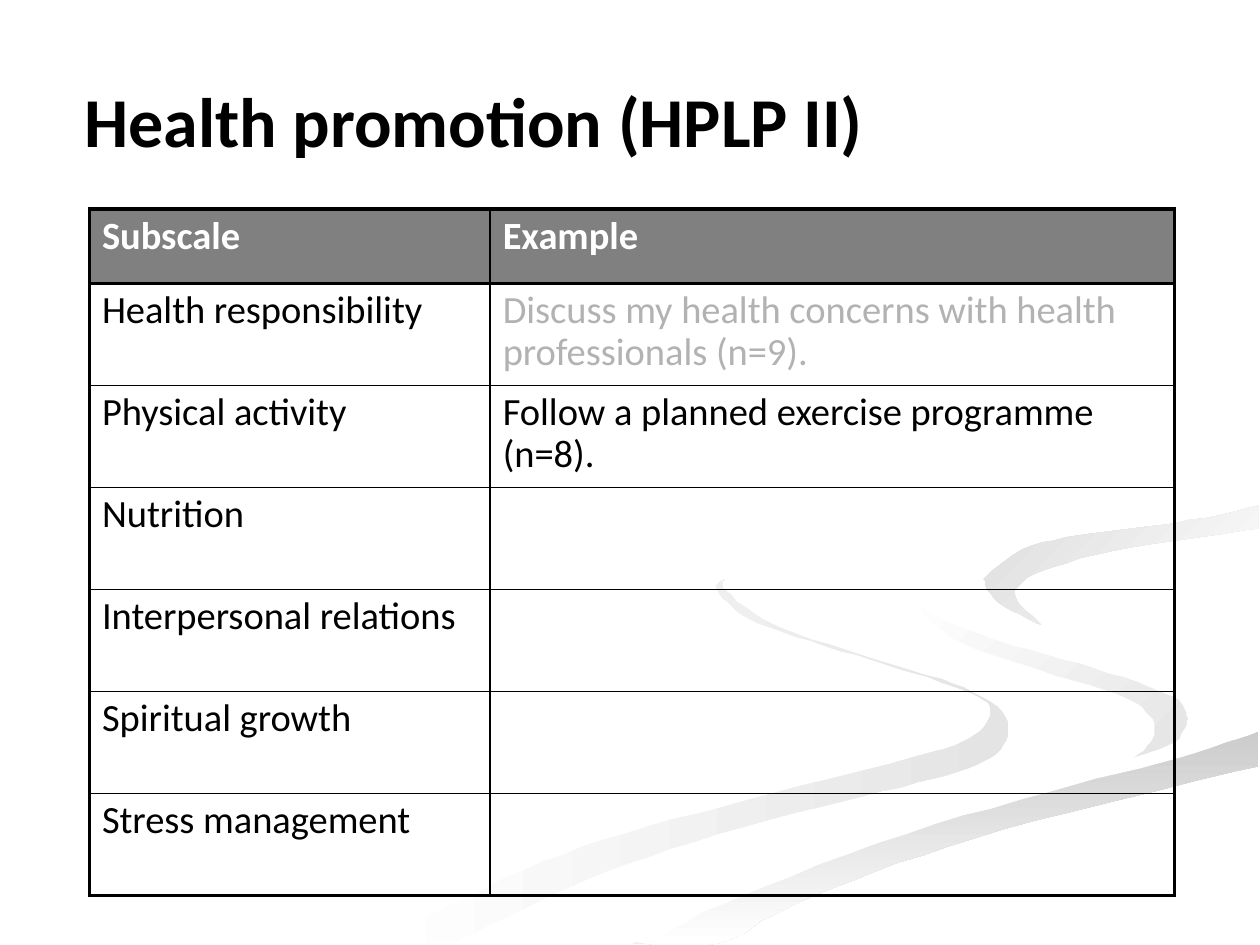
from itertools import chain

from lxml import etree
from pptx import Presentation
from pptx import util as u
from pptx.dml import color as dml
from pptx.enum import text
from pptx.oxml import ns

FONT = "Calibri"
BLACK, WHITE, GRAY, PALE = "000000", "FFFFFF", "808080", "B2B2B2"
THIN, THICK = 1, 2.25
CURVE_STEPS = 6

EDGES = {
    "left top": [(414, 331), (415, 338), (442, 357), (491, 374), (545, 391), (570, 404), (576, 418),
                 (566, 433), (533, 445), (469, 461), (383, 485), (310, 514), (260, 539)],
    "left bottom": [(216, 539), (300, 497), (359, 476), (443, 453), (532, 430), (557, 420),
                    (566, 407), (559, 398), (524, 385), (471, 369), (427, 353), (410, 337),
                    (414, 331)],
    "middle top": [(521, 334), (528, 348), (570, 366), (626, 382), (670, 398), (679, 410)],
    "middle turn": [(679, 410), (671, 424), (644, 436)],
    "middle bottom": [(644, 436), (658, 424), (659, 411), (642, 398), (603, 386), (551, 368),
                      (528, 351), (521, 334)],
    "lower top": [(374, 538), (410, 518), (501, 482), (598, 453), (674, 433), (719, 418)],
    "lower bottom": [(719, 438), (591, 469), (500, 498), (442, 523), (411, 539), (362, 539)],
    "white left": [(679, 410), (670, 425), (607, 445), (507, 472), (412, 506), (343, 539)],
    "white bay": [(719, 387), (664, 376), (599, 358), (566, 340), (562, 331)],
    "white crest": [(719, 279), (662, 289), (597, 299), (543, 311), (527, 321), (521, 334)],
    "upper top": [(562, 331), (584, 314), (623, 305), (672, 299), (719, 289)],
    "upper bottom": [(719, 302), (645, 313), (596, 326), (580, 340), (595, 357)],
    "upper hook": [(595, 357), (570, 344), (562, 331)],
}

RIBBONS = [
    (("left top", "left bottom"), WHITE, "E4E4E4", 0),
    (("middle top", "middle turn", "middle bottom"), WHITE, "E4E4E4", 45),
    (("lower top", "lower bottom"), "CCCCCC", WHITE, 90),
    (("middle top", "white left", "lower top", "white bay", "upper top", "white crest"),
     WHITE, WHITE, 0),
    (("upper top", "upper bottom", "upper hook"), "DCDCDC", WHITE, 45),
]

HEADINGS = ("Subscale", "Example")
SUBSCALES = [
    ("Health responsibility", "Discuss my health concerns with health professionals (n=9)."),
    ("Physical activity", "Follow a planned exercise programme (n=8)."),
    ("Nutrition", ""),
    ("Interpersonal relations", ""),
    ("Spiritual growth", ""),
    ("Stress management", ""),
]
COLUMN_WIDTHS = (229, 391)
HEADING_HEIGHT, ROW_HEIGHT = 42.5, 58.3


def rgb(value):
    return dml.RGBColor.from_string(value)


def set_font(paragraph, size, color, bold=False):
    font = paragraph.font
    font.name = FONT
    font.size = u.Pt(size)
    font.bold = bold
    font.color.rgb = rgb(color)


def spline(a, b, c, d, t):
    return (2 * b + (c - a) * t + (2 * a - 5 * b + 4 * c - d) * t ** 2
            + (3 * b - a - 3 * c + d) * t ** 3) / 2


def smooth(knots):
    padded = [knots[0], *knots, knots[-1]]
    points = []
    for window in zip(padded, padded[1:], padded[2:], padded[3:]):
        for step in range(CURVE_STEPS):
            points.append(tuple(spline(*axis, step / CURVE_STEPS) for axis in zip(*window)))
    return points + [knots[-1]]


def add_ribbon(page, edge_names, start, end, angle):
    outline = list(chain.from_iterable(smooth(EDGES[name]) for name in edge_names))
    builder = page.shapes.build_freeform(*outline[0], scale=u.Pt(1))
    builder.add_line_segments(outline[1:], close=True)
    ribbon = builder.convert_to_shape()
    ribbon.shadow.inherit = False
    ribbon.line.fill.background()
    if start == end:
        ribbon.fill.solid()
        ribbon.fill.fore_color.rgb = rgb(start)
        return
    ribbon.fill.gradient()
    ribbon.fill.gradient_angle = -angle % 360
    for stop, color in zip(ribbon.fill.gradient_stops, (start, end)):
        stop.color.rgb = rgb(color)


def add_title(page, wording):
    box = page.shapes.add_textbox(u.Pt(48.2), u.Pt(20.2), u.Pt(535), u.Pt(72))
    frame = box.text_frame
    frame.word_wrap = True
    frame.vertical_anchor = text.MSO_ANCHOR.BOTTOM
    frame.margin_left = frame.margin_right = u.Pt(0)
    frame.margin_top = frame.margin_bottom = u.Pt(0)
    paragraph = frame.paragraphs[0]
    paragraph.text = wording
    set_font(paragraph, 40, BLACK, bold=True)


def set_borders(cell, **widths):
    properties = cell._tc.get_or_add_tcPr()
    for side, width in widths.items():
        line = etree.SubElement(properties, ns.qn(f"a:ln{side}"), w=str(u.Pt(width)))
        fill = etree.SubElement(line, ns.qn("a:solidFill"))
        etree.SubElement(fill, ns.qn("a:srgbClr"), val=BLACK)


def write_cell(cell, wording, color, bold=False):
    paragraph = cell.text_frame.paragraphs[0]
    paragraph.text = wording
    paragraph.line_spacing = 0.9
    paragraph.space_after = u.Pt(4.4)
    set_font(paragraph, 22, color, bold)


def add_subscale_table(page):
    rows = [HEADINGS, *SUBSCALES]
    last = len(rows) - 1
    frame = page.shapes.add_table(
        len(rows), len(HEADINGS), u.Pt(51.1), u.Pt(119.5),
        u.Pt(sum(COLUMN_WIDTHS)), u.Pt(HEADING_HEIGHT + last * ROW_HEIGHT))
    table = frame.table
    for column, width in zip(table.columns, COLUMN_WIDTHS):
        column.width = u.Pt(width)
    for i, wordings in enumerate(rows):
        heading = i == 0
        table.rows[i].height = u.Pt(HEADING_HEIGHT if heading else ROW_HEIGHT)
        for j, wording in enumerate(wordings):
            cell = table.cell(i, j)
            set_borders(cell,
                        L=THICK if j == 0 else THIN,
                        R=THICK if j == 1 else THIN,
                        T=THICK if i in (0, 1) else THIN,
                        B=THICK if i in (0, last) else THIN)
            if heading:
                cell.fill.solid()
                cell.fill.fore_color.rgb = rgb(GRAY)
                write_cell(cell, wording, WHITE, bold=True)
            else:
                cell.fill.background()
                write_cell(cell, wording, PALE if (i, j) == (1, 1) else BLACK)


def main():
    deck = Presentation()
    deck.slide_width, deck.slide_height = u.Pt(720), u.Pt(540)
    page = deck.slides.add_slide(deck.slide_layouts[6])
    for ribbon in RIBBONS:
        add_ribbon(page, *ribbon)
    add_title(page, "Health promotion (HPLP II)")
    add_subscale_table(page)
    deck.save("out.pptx")


if __name__ == "__main__":
    main()
